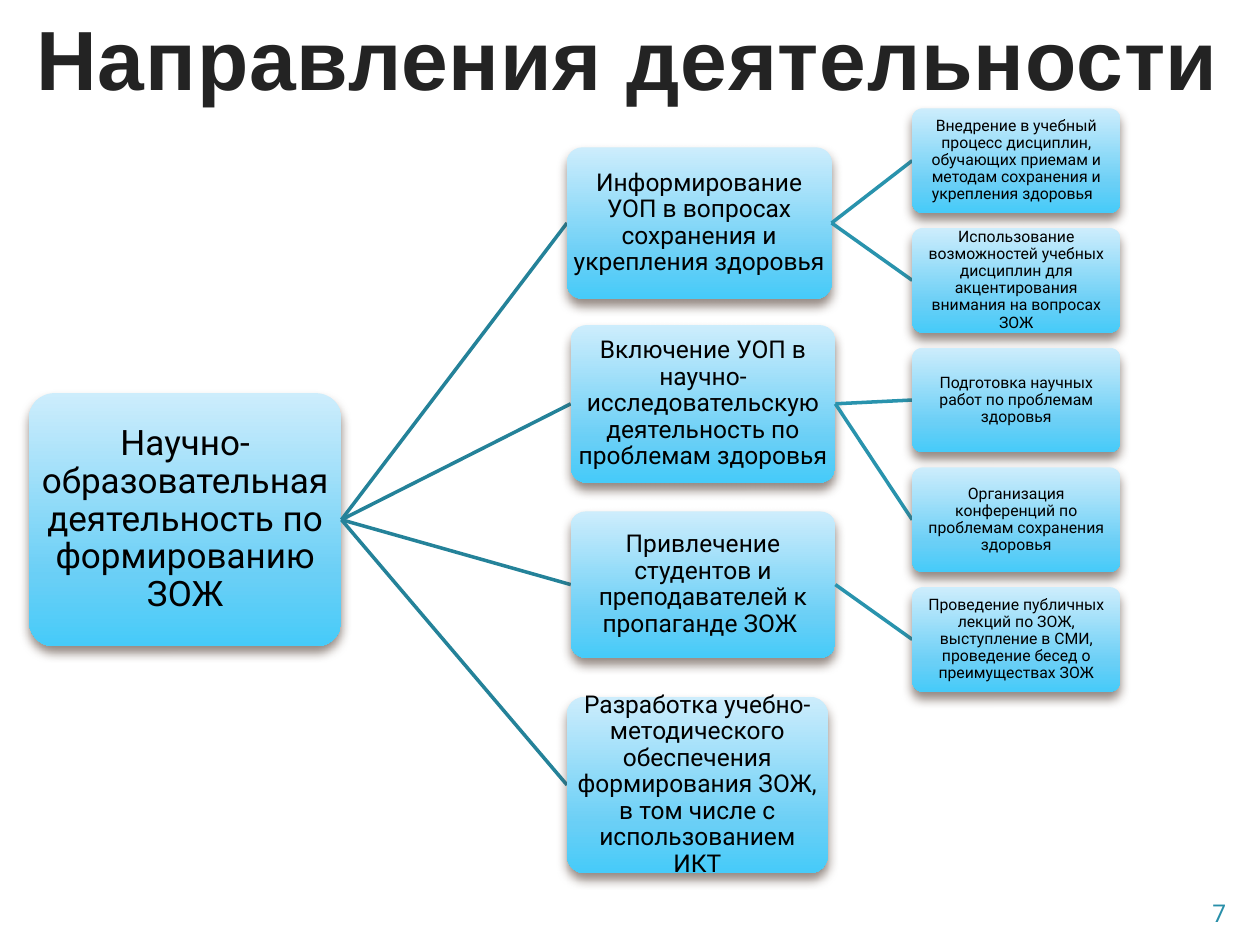
from pptx import Presentation
from pptx.dml.color import RGBColor
from pptx.enum.shapes import MSO_CONNECTOR, MSO_SHAPE
from pptx.enum.text import MSO_ANCHOR, PP_ALIGN
from pptx.oxml import parse_xml
from pptx.oxml.ns import nsdecls
from pptx.util import Inches, Pt

TITLE = "Направления деятельности"
PAGE = "7"
ROOT = "Научно-образовательная деятельность по формированию ЗОЖ"
# text, (left, top, width, height), leaves
BRANCHES = [
    ("Информирование УОП в вопросах сохранения и укрепления здоровья",
     (4.5, 1.17, 2.1, 1.2),
     ["Внедрение в учебный процесс дисциплин, обучающих приемам и методам "
      "сохранения и укрепления здоровья  ",
      "Использование возможностей учебных дисциплин для акцентирования "
      "внимания на вопросах ЗОЖ"]),
    ("Включение УОП в научно-исследовательскую деятельность по проблемам здоровья",
     (4.53, 2.58, 2.1, 1.25),
     ["Подготовка научных работ по проблемам здоровья",
      "Организация конференций по проблемам сохранения здоровья"]),
    ("Привлечение студентов и преподавателей к пропаганде ЗОЖ ",
     (4.53, 4.06, 2.1, 1.16),
     ["Проведение публичных лекций по ЗОЖ, выступление в СМИ, проведение "
      "бесед о преимуществах ЗОЖ"]),
    ("Разработка учебно-методического обеспечения формирования ЗОЖ, "
     "в том числе с использованием ИКТ",
     (4.5, 5.53, 2.07, 1.4), []),
]
ROOT_BOX = (0.23, 3.12, 2.48, 2.01)
LEAF_LEFT, LEAF_TOP, LEAF_W, LEAF_H, LEAF_STEP = 7.24, 0.86, 1.65, 0.83, 0.95
ROOT_LINE, LEAF_LINE = "248299", "2993AD"
GRADIENT = [(0, "CDEDFC"), (72, "6ACFF6"), (100, "46CBF9")]
SHADOW = "4E3B30"


def rgb(value):
    return RGBColor.from_string(value)


def set_text(tf, text, align, color, **font):
    p = tf.paragraphs[0]
    p.alignment = align
    r = p.add_run()
    r.text = text
    r.font.color.rgb = rgb(color)
    for name, value in font.items():
        setattr(r.font, name, value)
    return p, r


def fill_gradient(sp):
    sp.fill.gradient()
    sp.fill.gradient_angle = 270  # counter-clockwise: light at the top
    stops = "".join(f'<a:gs pos="{pos * 1000}"><a:srgbClr val="{color}"/></a:gs>'
                    for pos, color in GRADIENT)
    old = sp.element.spPr.find(".//{*}gsLst")
    old.getparent().replace(
        old, parse_xml(f'<a:gsLst {nsdecls("a")}>{stops}</a:gsLst>'))


def add_shadow(sp):
    sp.shadow.inherit = False
    sp.element.spPr.find("{*}effectLst").append(parse_xml(
        f'<a:outerShdw {nsdecls("a")} blurRad="{Pt(6)}" dist="{Pt(4)}" '
        f'dir="5400000" rotWithShape="0"><a:srgbClr val="{SHADOW}">'
        '<a:alpha val="60000"/></a:srgbClr></a:outerShdw>'))


def add_node(s, text, box, size):
    sp = s.shapes.add_shape(MSO_SHAPE.ROUNDED_RECTANGLE, *map(Inches, box))
    sp.adjustments[0] = 0.1
    fill_gradient(sp)
    sp.line.fill.background()
    add_shadow(sp)
    tf = sp.text_frame
    tf.word_wrap = True
    tf.vertical_anchor = MSO_ANCHOR.MIDDLE
    for side in ("left", "top", "right", "bottom"):
        setattr(tf, f"margin_{side}", Inches(0.01))
    p, _ = set_text(tf, text, PP_ALIGN.CENTER, "000000", name="Roboto", size=Pt(size))
    p.line_spacing = 0.9


def link(s, parent, child, color):
    """Join the middle of the parent's right side to the child's left side."""
    x, y, w, h = parent
    cx, cy, _, ch = child
    ends = (x + w, y + h / 2, cx, cy + ch / 2)
    line = s.shapes.add_connector(MSO_CONNECTOR.STRAIGHT, *map(Inches, ends))
    line.line.color.rgb = rgb(color)
    line.line.width = Pt(2)
    line.element.spPr.append(parse_xml(f'<a:effectLst {nsdecls("a")}/>'))


def main():
    prs = Presentation()
    prs.slide_width, prs.slide_height = Inches(10), Inches(7.5)
    s = prs.slides.add_slide(prs.slide_layouts[5])

    title = s.shapes.title
    title.left, title.top, title.width, title.height = map(Inches, (0.14, 0, 9.69, 0.91))
    title.text_frame.word_wrap = False
    title.text_frame.vertical_anchor = MSO_ANCHOR.TOP
    _, r = set_text(title.text_frame, TITLE, PP_ALIGN.CENTER, "232323",
                    name="Arial", size=Pt(48), bold=True)
    r.font._element.set("spc", "50")

    add_node(s, ROOT, ROOT_BOX, 20)
    leaf_top = LEAF_TOP
    for text, box, leaves in BRANCHES:
        link(s, ROOT_BOX, box, ROOT_LINE)
        add_node(s, text, box, 14)
        for leaf in leaves:
            leaf_box = (LEAF_LEFT, leaf_top, LEAF_W, LEAF_H)
            link(s, box, leaf_box, LEAF_LINE)
            add_node(s, leaf, leaf_box, 9)
            leaf_top += LEAF_STEP

    number = s.shapes.add_textbox(*map(Inches, (0.51, 7.08, 9.32, 0.27)))
    number.text_frame.word_wrap = True
    set_text(number.text_frame, PAGE, PP_ALIGN.RIGHT, "288FA9", name="Roboto", size=Pt(14))

    prs.save("out.pptx")


if __name__ == "__main__":
    main()
